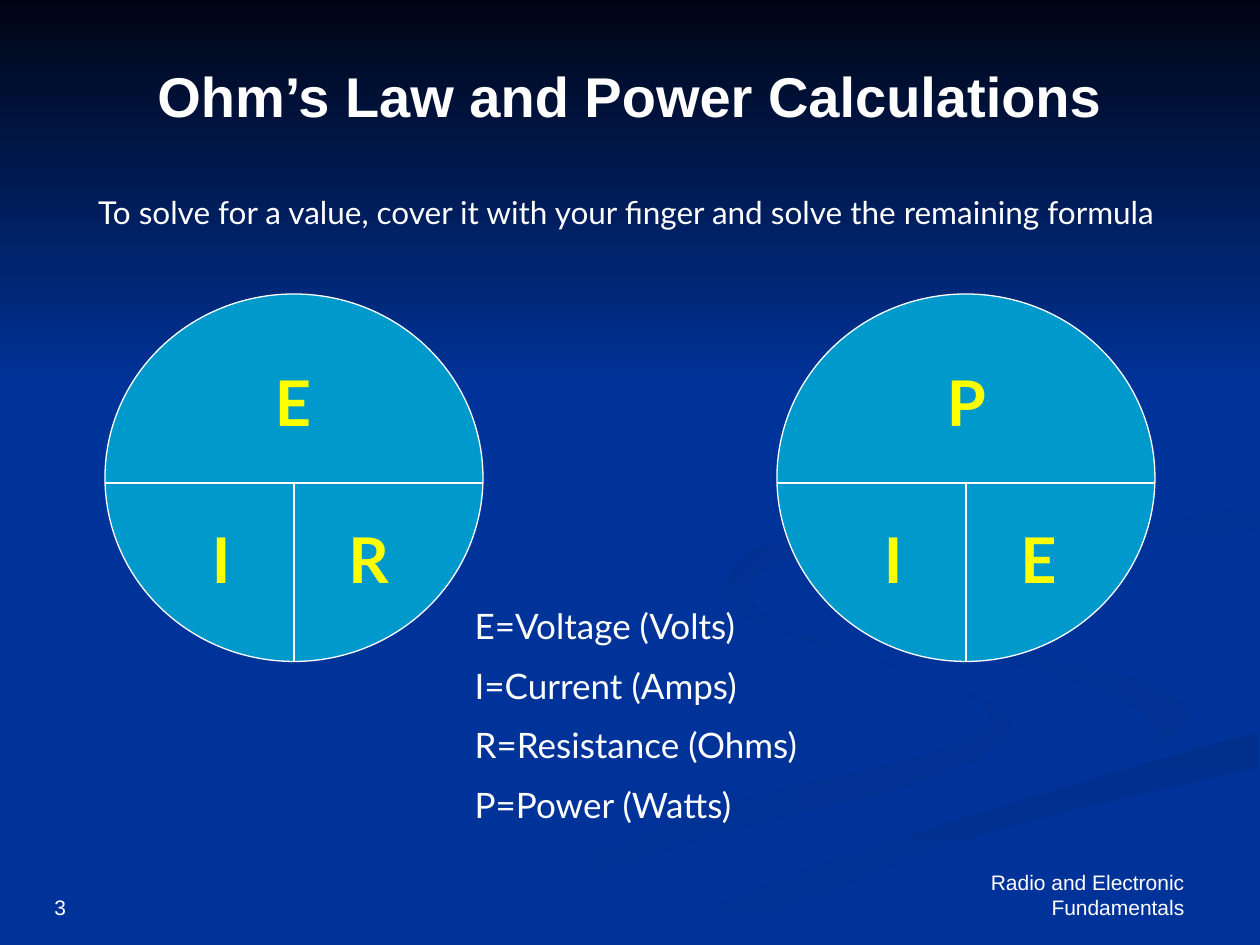
from dataclasses import dataclass

from lxml import etree
from pptx import Presentation
from pptx import util as u
from pptx.dml import color as dml
from pptx.enum import shapes, text
from pptx.oxml import ns

PX = 7620
CURVE_STEPS = 6
COLORS = {
    "background": "003399", "night": "000514", "disc": "0099CC",
    "white": "FFFFFF", "yellow": "FFFF00", "shade": "003193",
    "deep": "002F8C", "dusk": "003091", "haze": "002F8E",
}
Point = tuple[int, int]
Edge = tuple[Point, ...]


@dataclass(frozen=True)
class Style:
    size: int
    font: str = "Lato"
    color: str = "white"
    bold: bool = False
    align: text.PP_ALIGN = text.PP_ALIGN.LEFT
    anchor: text.MSO_ANCHOR = text.MSO_ANCHOR.TOP
    grow: bool = True


@dataclass(frozen=True)
class Ribbon:
    start: str
    end: str
    angle: int
    edges: tuple[Edge, ...]


@dataclass(frozen=True)
class Wheel:
    left: int
    top_letter: str
    left_letter: str
    right_letter: str


FOOTER = Style(12, "Arial", anchor=text.MSO_ANCHOR.BOTTOM, grow=False)
FOOTER_RIGHT = Style(12, "Arial", align=text.PP_ALIGN.RIGHT,
                     anchor=text.MSO_ANCHOR.BOTTOM, grow=False)
TITLE = Style(32, "Arial", bold=True, align=text.PP_ALIGN.CENTER,
              anchor=text.MSO_ANCHOR.MIDDLE, grow=False)
LETTER = Style(36, color="yellow", bold=True)
QUANTITY = Style(20)
HINT = Style(18, align=text.PP_ALIGN.CENTER)

TAIL = ((869, 557), (894, 588), (973, 618), (1086, 648), (1132, 684), (1073, 726))
RIVER = ((604, 899), (756, 832), (997, 755), (1198, 697))
HOOK = ((938, 552), (986, 521), (1079, 502), (1199, 482))
RIBBONS = (
    Ribbon("background", "shade", 0, (
        ((690, 551), (691, 576), (757, 606), (857, 636), (943, 679),
         (887, 718), (647, 779), (360, 899)),
        ((433, 899), (638, 809), (865, 748), (959, 702), (931, 664),
         (818, 623), (713, 582), (690, 551)))),
    Ribbon("background", "shade", 45, (
        TAIL, ((1073, 726), (1101, 697), (1056, 659), (937, 622), (869, 557)))),
    Ribbon("deep", "background", 90, (
        RIVER, ((1198, 731), (985, 781), (834, 830), (685, 899)))),
    Ribbon("background", "background", 0, (
        TAIL, ((1073, 726), (845, 786), (572, 899)), RIVER,
        ((1199, 646), (1085, 623), (965, 582), (938, 552)), HOOK,
        ((1199, 464), (1049, 490), (906, 518), (869, 557)))),
    Ribbon("dusk", "background", 45, (
        HOOK, ((1199, 504), (1075, 522), (979, 551), (991, 595)),
        ((991, 595), (949, 574), (938, 552)))),
    Ribbon("haze", "background", 45, (
        ((914, 280), (1015, 335), (1066, 400), (1022, 449), (880, 485),
         (738, 515), (694, 555), (746, 600)),
        ((746, 600), (712, 564), (749, 533), (887, 505), (1026, 469),
         (1073, 413), (1037, 349), (914, 280)))),
    Ribbon("night", "background", 90, (((0, 0), (1200, 0)), ((1200, 370), (0, 370)))),
)
WHEELS = (Wheel(100, "E", "I", "R"), Wheel(740, "P", "I", "E"))
QUANTITIES = ("E=Voltage (Volts)", "I=Current (Amps)",
              "R=Resistance (Ohms)", "P=Power (Watts)")


def rgb(name: str) -> dml.RGBColor:
    return dml.RGBColor.from_string(COLORS[name])


def px(*lengths: int) -> list[int]:
    return [length * PX for length in lengths]


def smooth_edge(edge: Edge) -> list[Point]:
    if len(edge) == 2:
        return list(edge)
    padded = (edge[0], *edge, edge[-1])
    curve = []
    for knots in zip(padded, padded[1:], padded[2:], padded[3:]):
        for step in range(CURVE_STEPS):
            t = step / CURVE_STEPS
            curve.append(tuple(
                round(b + t * (c - a) / 2 + t**2 * (a - 2.5 * b + 2 * c - d / 2)
                      + t**3 * (3 * b - a - 3 * c + d) / 2)
                for a, b, c, d in zip(*knots)))
    return curve + [edge[-1]]


def write(shape, lines: tuple[str, ...], style: Style) -> None:
    frame = shape.text_frame
    frame.word_wrap = True
    frame.auto_size = (text.MSO_AUTO_SIZE.SHAPE_TO_FIT_TEXT if style.grow
                       else text.MSO_AUTO_SIZE.NONE)
    frame.vertical_anchor = style.anchor
    for index, line in enumerate(lines):
        paragraph = frame.add_paragraph() if index else frame.paragraphs[0]
        paragraph.alignment = style.align
        paragraph.space_before = u.Pt(style.size / 2 if index else 0)
        run = paragraph.add_run()
        run.text = line
        run.font.size = u.Pt(style.size)
        run.font.name = style.font
        run.font.bold = style.bold
        run.font.color.rgb = rgb(style.color)


def add_text(slide, box: tuple[int, ...], line: str, style: Style) -> None:
    write(slide.shapes.add_textbox(*px(*box)), (line,), style)


def fill_placeholder(shape, box: tuple[int, ...], lines: tuple[str, ...],
                     style: Style) -> None:
    shape.left, shape.top, shape.width, shape.height = px(*box)
    write(shape, lines, style)
    shape.element.getparent().append(shape.element)


def remove_bullets(shape) -> None:
    for paragraph in shape.text_frame.paragraphs:
        properties = paragraph._p.get_or_add_pPr()
        properties.set("marL", "0")
        properties.set("indent", "0")
        etree.SubElement(properties, ns.qn("a:buNone"))


def add_ribbon(slide, ribbon: Ribbon) -> None:
    points = [point for edge in ribbon.edges for point in smooth_edge(edge)]
    builder = slide.shapes.build_freeform(*points[0], scale=PX)
    builder.add_line_segments(points[1:], close=True)
    shape = builder.convert_to_shape()
    shape.shadow.inherit = False
    shape.line.fill.background()
    shape.fill.gradient()
    shape.fill.gradient_angle = (360 - ribbon.angle) % 360
    for stop, name in zip(shape.fill.gradient_stops, (ribbon.start, ribbon.end)):
        stop.color.rgb = rgb(name)


def add_line(slide, ends: tuple[int, ...]) -> None:
    line = slide.shapes.add_connector(shapes.MSO_CONNECTOR.STRAIGHT, *px(*ends))
    line.line.color.rgb = rgb("white")
    line.line.width = u.Pt(0.75)
    etree.SubElement(line.element.spPr, ns.qn("a:effectLst"))


def add_wheel(slide, wheel: Wheel) -> None:
    left, middle = wheel.left, wheel.left + 180
    disc = slide.shapes.add_shape(shapes.MSO_SHAPE.OVAL, *px(left, 280, 360, 350))
    disc.shadow.inherit = False
    disc.fill.solid()
    disc.fill.fore_color.rgb = rgb("disc")
    disc.line.color.rgb = rgb("white")
    disc.line.width = u.Pt(0.75)
    add_line(slide, (left, 460, left + 360, 460))
    add_line(slide, (middle, 630, middle, 460))
    add_text(slide, (left + 150, 340, 60, 84), wheel.top_letter, LETTER)
    add_text(slide, (left + 90, 490, 60, 84), wheel.left_letter, LETTER)
    add_text(slide, (left + 220, 490, 70, 84), wheel.right_letter, LETTER)


def main() -> None:
    presentation = Presentation()
    presentation.slide_width, presentation.slide_height = px(1200, 900)
    slide = presentation.slides.add_slide(presentation.slide_layouts[1])
    slide.background.fill.solid()
    slide.background.fill.fore_color.rgb = rgb("background")
    title, quantities = slide.placeholders
    for ribbon in RIBBONS:
        add_ribbon(slide, ribbon)
    add_text(slide, (860, 820, 280, 62), "Radio and Electronic Fundamentals", FOOTER_RIGHT)
    add_text(slide, (40, 820, 750, 62), "3", FOOTER)
    fill_placeholder(title, (20, 0, 1160, 182), ("Ohm’s Law and Power Calculations",), TITLE)
    for wheel in WHEELS:
        add_wheel(slide, wheel)
    fill_placeholder(quantities, (440, 570, 360, 232), QUANTITIES, QUANTITY)
    remove_bullets(quantities)
    add_text(slide, (53, 178, 1087, 48),
             "To solve for a value, cover it with your finger and solve the remaining formula", HINT)
    presentation.save("out.pptx")


if __name__ == "__main__":
    main()
